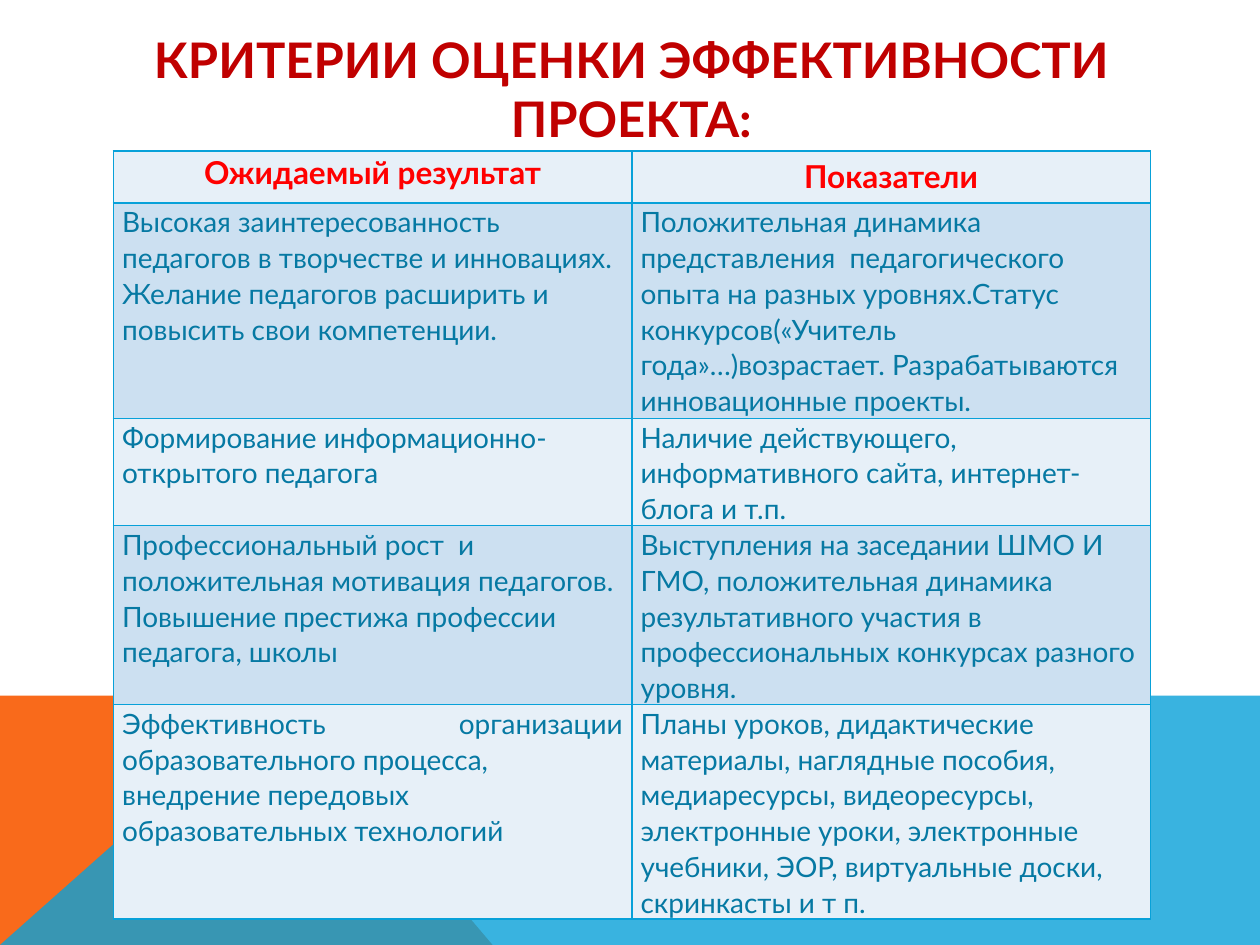
from pptx import Presentation
from pptx.dml.color import RGBColor as Rgb
from pptx.enum.text import MSO_ANCHOR as Anchor, MSO_AUTO_SIZE as Fit, PP_ALIGN as Align
from pptx.oxml import parse_xml
from pptx.oxml.ns import nsdecls, qn
from pptx.util import Inches, Pt

HUES = {
    "title": "C00000", "head": "FF0000", "text": "0679A3", "line": "08A1D9",
    "light": "E7F0F8", "dark": "CCE0F1", "orange": "F96A1B", "blue": "08A1D9",
}
HEADS = ["Ожидаемый результат", "Показатели"]
ROWS = [
    ("Высокая заинтересованность педагогов в творчестве и инновациях. "
     "Желание педагогов расширить и повысить свои компетенции.",
     "Положительная динамика представления  педагогического опыта на разных "
     "уровнях.Статус конкурсов(«Учитель года»…)возрастает. "
     "Разрабатываются инновационные проекты."),
    ("Формирование информационно-открытого педагога",
     "Наличие действующего, информативного сайта, интернет-блога и т.п."),
    ("Профессиональный рост  и положительная мотивация педагогов. "
     "Повышение престижа профессии педагога, школы",
     "Выступления на заседании ШМО И ГМО, положительная динамика "
     "результативного участия в профессиональных конкурсах разного уровня."),
    ("Эффективность организации образовательного процесса,\n"
     "внедрение передовых образовательных технологий",
     "Планы уроков, дидактические материалы, наглядные пособия, медиаресурсы, "
     "видеоресурсы, электронные уроки, электронные учебники, ЭОР, "
     "виртуальные доски, скринкасты и т п."),
]
TALL = [0.41, 1.71, 0.85, 1.42, 1.7]


class Deck:
    face = "Lato"

    def __init__(self, wide, high):
        self.show = Presentation()
        self.show.slide_width, self.show.slide_height = Inches(wide), Inches(high)
        self.slide = self.show.slides.add_slide(self.show.slide_layouts[5])

    def color(self, name):
        return Rgb.from_string(HUES[name])

    def font(self, par, size, hue, bold, align):
        par.alignment = align
        font = par.font
        font.name, font.size, font.bold = self.face, Pt(size), bold
        font.color.rgb = self.color(hue)

    def title(self, text, left, top, wide, high):
        box = self.slide.shapes.title
        box.left, box.top, box.width, box.height = map(Inches, (left, top, wide, high))
        frame = box.text_frame
        frame.text = text
        frame.word_wrap, frame.auto_size = True, Fit.NONE
        frame.vertical_anchor = Anchor.MIDDLE
        self.font(frame.paragraphs[0], 28, "title", True, Align.CENTER)

    def shape(self, points, hue, alpha=100):
        spots = [(Inches(x), Inches(y)) for x, y in points]
        pen = self.slide.shapes.build_freeform(*spots[0])
        pen.add_line_segments(spots[1:], close=True)
        form = pen.convert_to_shape()
        form.shadow.inherit = False
        form.line.fill.background()
        form.fill.solid()
        form.fill.fore_color.rgb = self.color(hue)
        if alpha < 100:
            tint = form.fill._xPr.find(".//" + qn("a:srgbClr"))
            tint.append(parse_xml(f'<a:alpha {nsdecls("a")} val="{alpha * 1000}"/>'))

    def cell(self, cell, text, fill, head, tight):
        for side in ("lnL", "lnR", "lnT", "lnB"):
            cell._tc.get_or_add_tcPr().append(parse_xml(
                f'<a:{side} {nsdecls("a")} w="{Pt(1)}"><a:solidFill>'
                f'<a:srgbClr val="{HUES["line"]}"/></a:solidFill></a:{side}>'))
        cell.fill.solid()
        cell.fill.fore_color.rgb = self.color(fill)
        if tight:
            cell.margin_left = cell.margin_right = Inches(0.07)
            cell.margin_top = cell.margin_bottom = 0
        cell.text = text
        pars = cell.text_frame.paragraphs
        for par in pars:
            align = Align.CENTER if head else Align.LEFT
            if par is not pars[-1]:
                align = Align.JUSTIFY
            self.font(par, 18 if head else 16, "head" if head else "text", head, align)
            if tight:
                par.line_spacing = 1.07

    def table(self, rows, tall, left, top, wide):
        grid = self.slide.shapes.add_table(
            len(rows), len(rows[0]), *map(Inches, (left, top, wide, sum(tall)))).table
        grid.first_row = grid.horz_banding = False
        for r, texts in enumerate(rows):
            grid.rows[r].height = Inches(tall[r])
            for c, text in enumerate(texts):
                self.cell(grid.cell(r, c), text, "dark" if r % 2 else "light",
                          r == 0, (r, c) != (0, 1))


def main():
    deck = Deck(10, 7.5)
    deck.shape([(0, 7.5), (0, 5.52), (2.23, 5.52), (3.91, 7.5)], "orange")
    deck.shape([(0, 7.5), (2.23, 5.52), (10, 5.52), (10, 7.5)], "blue", 80)
    deck.title("КРИТЕРИИ ОЦЕНКИ ЭФФЕКТИВНОСТИ ПРОЕКТА:", 0.9, 0.4, 8.22, 0.6)
    deck.table([HEADS, *ROWS], TALL, 0.9, 1.2, 8.23)
    deck.show.save("out.pptx")


if __name__ == "__main__":
    main()
